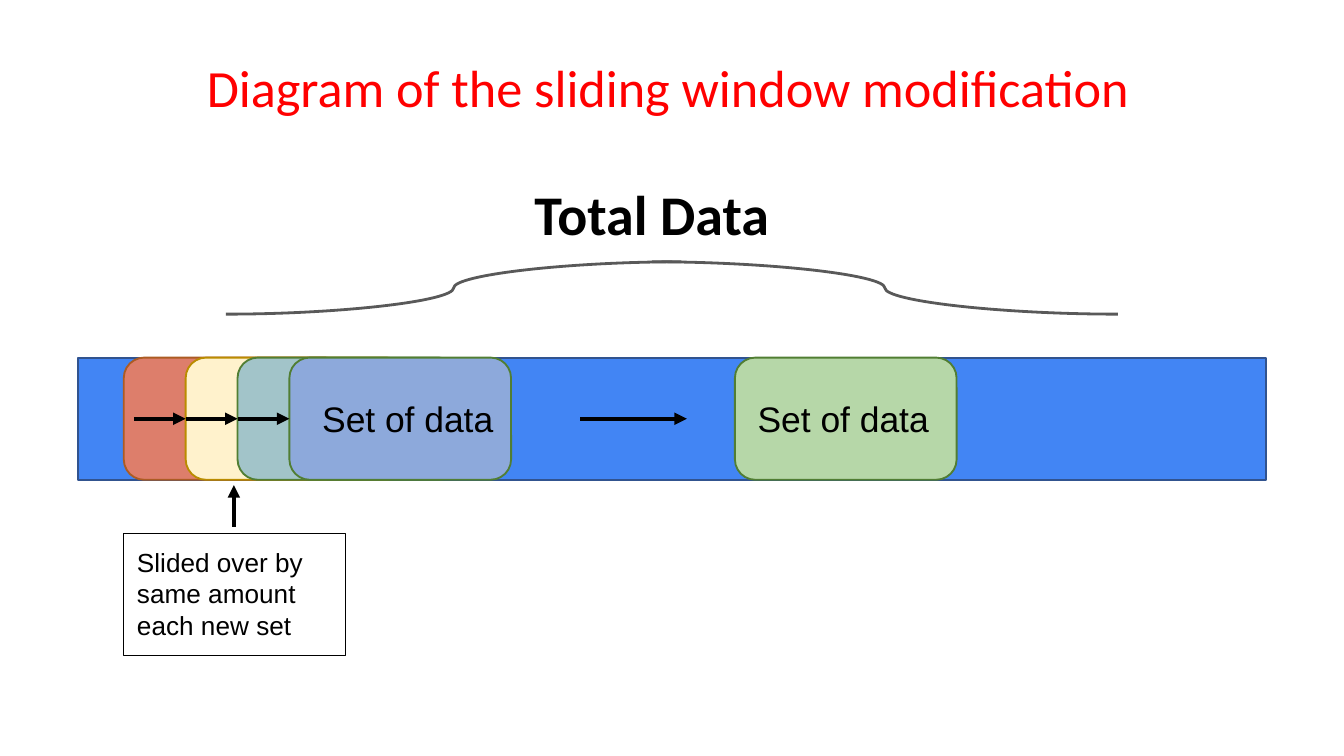
from lxml.etree import SubElement
from pptx import Presentation
from pptx.dml.color import RGBColor
from pptx.enum.shapes import MSO_CONNECTOR as Connector, MSO_SHAPE as Shape
from pptx.enum.text import MSO_ANCHOR as Anchor, PP_ALIGN as Align
from pptx.oxml.ns import qn
from pptx.util import Cm, Pt

BLACK = "000000"


def color(hex_string):
    return RGBColor.from_string(hex_string)


class SlideBuilder:
    """Holds the text style and the current slide; lengths are in cm."""

    body_font = "Arial"
    heading_font = "Calibri"
    inset = 0.25

    def __init__(self, slide):
        self.slide = slide

    def fill_text(self, frame, text, size, font=None, ink=BLACK, bold=False,
                  align=Align.LEFT, anchor=Anchor.MIDDLE, insets=None):
        horizontal, vertical = insets or (self.inset, self.inset)
        frame.word_wrap = True
        frame.vertical_anchor = anchor
        frame.margin_left = frame.margin_right = Cm(horizontal)
        frame.margin_top = frame.margin_bottom = Cm(vertical)
        paragraph = frame.paragraphs[0]
        paragraph.alignment = align
        run = paragraph.add_run()
        run.text = text
        run.font.name = font or self.body_font
        run.font.size = Pt(size)
        run.font.bold = bold
        run.font.color.rgb = color(ink)
        return paragraph

    def title(self, text, left, top, width, height):
        shape = self.slide.shapes.title
        shape.left, shape.top = Cm(left), Cm(top)
        shape.width, shape.height = Cm(width), Cm(height)
        paragraph = self.fill_text(shape.text_frame, text, 28, self.heading_font,
                                   "FF0000", insets=(0.18, 0.1))
        paragraph.line_spacing = 0.9

    def text(self, text, left, top, width, height, size, **style):
        box = self.slide.shapes.add_textbox(Cm(left), Cm(top), Cm(width), Cm(height))
        self.fill_text(box.text_frame, text, size, **style)

    def box(self, kind, left, top, width, height, fill, line, weight=1):
        shape = self.slide.shapes.add_shape(kind, Cm(left), Cm(top), Cm(width), Cm(height))
        shape.shadow.inherit = False
        if fill:
            shape.fill.solid()
            shape.fill.fore_color.rgb = color(fill)
        else:
            shape.fill.background()
        shape.line.color.rgb = color(line)
        shape.line.width = Pt(weight)
        return shape

    def connector(self, kind, start, end, line, weight):
        shape = self.slide.shapes.add_connector(kind, *map(Cm, start + end))
        shape.line.color.rgb = color(line)
        shape.line.width = Pt(weight)
        SubElement(shape._element.spPr, qn("a:effectLst"))
        return shape

    def arrow(self, start, end):
        shape = self.connector(Connector.STRAIGHT, start, end, BLACK, 2.25)
        SubElement(shape._element.spPr.get_or_add_ln(), qn("a:tailEnd"), type="triangle")


def main():
    presentation = Presentation()
    presentation.slide_width, presentation.slide_height = Cm(25.4), Cm(14.29)
    builder = SlideBuilder(presentation.slides.add_slide(presentation.slide_layouts[5]))
    builder.title("Diagram of the sliding window modification", 3.73, 0.33, 17.96, 2.77)

    # Bar of all data
    bar_top, bar_height = 6.76, 2.31
    builder.box(Shape.RECTANGLE, 1.47, bar_top, 22.45, bar_height, "4285F4", "31538F")

    # Windows on the bar
    first_left, second_left, step, window_width = 2.34, 3.51, 0.98, 4.19
    last_left, final_left = second_left + 2 * step, 13.89
    windows = [
        (first_left, "DD7E6B", "AC5B23"),
        (second_left, "FFF2CC", "BA8C00"),
        (second_left + step, "A2C4C9", "517E33"),
        (last_left, "8DA9DB", "517E33"),
        (final_left, "B6D7A8", "517E33"),
    ]
    for left, fill, line in windows:
        builder.box(Shape.ROUNDED_RECTANGLE, left, bar_top, window_width, bar_height, fill, line)
    for label_left in (5.84, 14.07):
        builder.text("Set of data", label_left, 7.24, 3.84, 1.32, 19)

    # Sliding arrows
    arrow_y = bar_top + bar_height / 2
    builder.arrow((10.97, arrow_y), (12.98, arrow_y))
    for index in range(3):
        tip = second_left + index * step
        builder.arrow((tip - step, arrow_y), (tip, arrow_y))

    # Note under the windows
    note = builder.box(Shape.RECTANGLE, first_left, 10.08, window_width, bar_height,
                       None, BLACK, 0.75)
    builder.fill_text(note.text_frame, "Slided over by same amount each new set", 14,
                      anchor=Anchor.TOP)
    builder.arrow((4.42, 9.96), (4.42, 9.17))

    # Brace with its heading
    brace_top, brace_bottom = 4.95, 5.94
    for outer, inner in ((4.27, 12.88), (21.13, 12.32)):
        builder.connector(Connector.CURVE, (outer, brace_bottom), (inner, brace_top),
                          "595959", 1.5)
    builder.text("Total Data", 9.6, 3.15, 5.44, 1.8, 30, font=builder.heading_font,
                 bold=True, align=Align.CENTER, anchor=Anchor.TOP)

    presentation.save("out.pptx")


if __name__ == "__main__":
    main()
